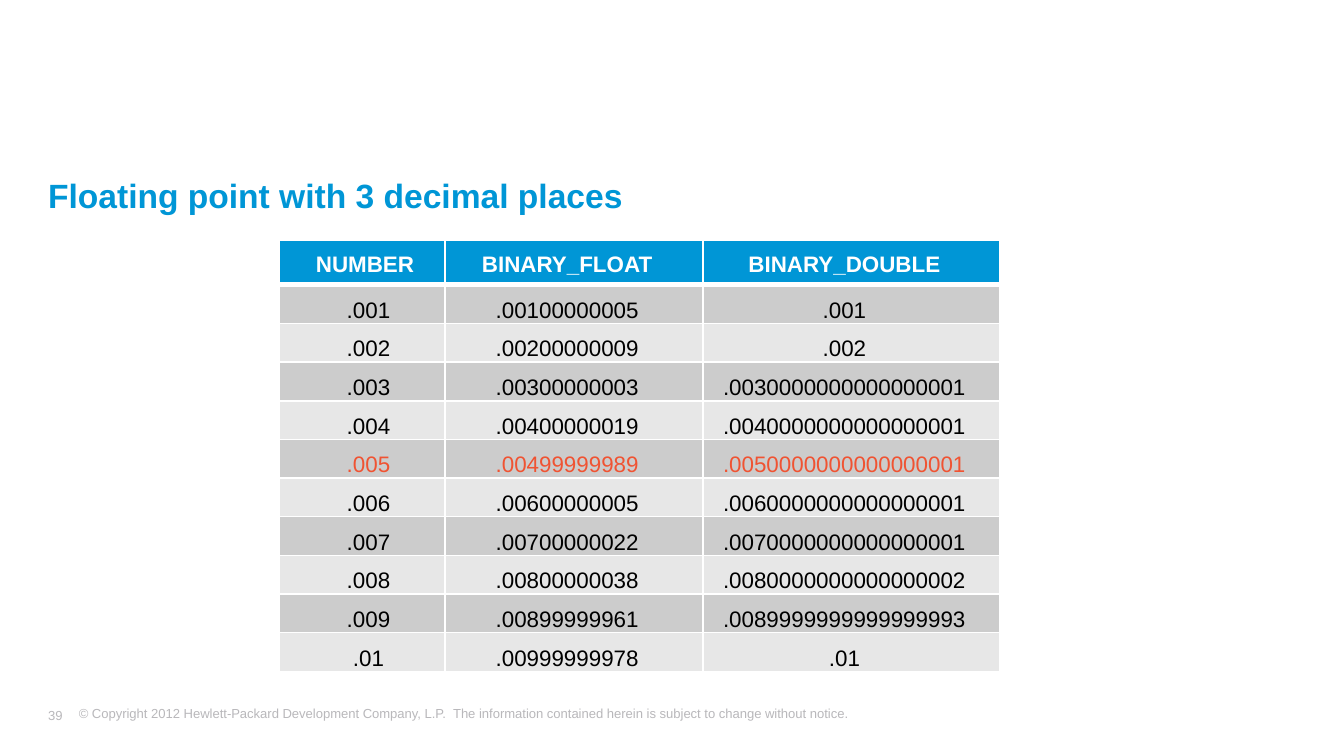
from lxml import etree
from pptx import Presentation
from pptx.dml.color import RGBColor
from pptx.enum import text
from pptx.oxml import ns
from pptx.util import Cm, Pt

COLORS = {
    "blue": "0096D6",
    "white": "FFFFFF",
    "black": "000000",
    "red": "F05332",
    "dark_band": "CCCCCC",
    "light_band": "E7E7E7",
    "footer": "B9B8BB",
}
ROWS = [
    (" NUMBER", "BINARY_FLOAT", "BINARY_DOUBLE"),
    (".001", ".00100000005", ".001"),
    (".002", ".00200000009", ".002"),
    (".003", ".00300000003", ".0030000000000000001"),
    (".004", ".00400000019", ".0040000000000000001"),
    (".005", ".00499999989", ".0050000000000000001"),
    (".006", ".00600000005", ".0060000000000000001"),
    (".007", ".00700000022", ".0070000000000000001"),
    (".008", ".00800000038", ".0080000000000000002"),
    (".009", ".00899999961", ".0089999999999999993"),
    (".01", ".00999999978", ".01"),
]
HIGHLIGHTED_NUMBER = ".005"
COLUMN_WIDTHS = [3.14, 4.88, 5.6]
HEADER_HEIGHT, ROW_HEIGHT = 0.85, 0.73


def style_font(paragraph, size, color, bold=False):
    for run in paragraph.runs:
        run.font.name = "Arial"
        run.font.size = Pt(size)
        run.font.bold = bold
        run.font.color.rgb = RGBColor.from_string(COLORS[color])


def add_borders(cell, top, bottom):
    """Draw white cell borders; top and bottom widths are in points."""
    properties = cell._tc.get_or_add_tcPr()
    widths = {"a:lnL": 1, "a:lnR": 1, "a:lnT": top, "a:lnB": bottom}
    for position, (tag, width) in enumerate(widths.items()):
        line = etree.Element(ns.qn(tag), w=str(Pt(width)))
        fill = etree.SubElement(line, ns.qn("a:solidFill"))
        etree.SubElement(fill, ns.qn("a:srgbClr"), val=COLORS["white"])
        properties.insert(position, line)


prs = Presentation()
prs.slide_width, prs.slide_height = Cm(25.4), Cm(14.28)
slide = prs.slides.add_slide(prs.slide_layouts[5])

# Heading
heading = slide.shapes.title
heading.left, heading.top = Cm(0.91), Cm(3.3)
heading.width, heading.height = Cm(22.56), Cm(1)
frame = heading.text_frame
frame.text = "Floating point with 3 decimal places"
frame.margin_left = frame.margin_top = frame.margin_right = frame.margin_bottom = 0
frame.vertical_anchor = text.MSO_ANCHOR.TOP
frame.paragraphs[0].alignment = text.PP_ALIGN.LEFT
style_font(frame.paragraphs[0], 18, "blue", bold=True)

# Comparison of number types
table_height = HEADER_HEIGHT + ROW_HEIGHT * (len(ROWS) - 1)
comparison = slide.shapes.add_table(
    len(ROWS), len(COLUMN_WIDTHS),
    Cm(5.27), Cm(4.53), Cm(sum(COLUMN_WIDTHS)), Cm(table_height),
).table
for column, width in zip(comparison.columns, COLUMN_WIDTHS):
    column.width = Cm(width)

for r, values in enumerate(ROWS):
    is_header = r == 0
    comparison.rows[r].height = Cm(HEADER_HEIGHT if is_header else ROW_HEIGHT)
    if is_header:
        band, color = "blue", "white"
    else:
        band = "dark_band" if r % 2 else "light_band"
        color = "red" if values[0] == HIGHLIGHTED_NUMBER else "black"
    for c, value in enumerate(values):
        cell = comparison.cell(r, c)
        cell.text = value
        cell.margin_left, cell.margin_top = Cm(0.25), Cm(0.24)
        cell.margin_bottom = Cm(0.13 if is_header else 0)
        if c:
            cell.margin_right = Cm(0.51)
        else:
            cell.margin_right = Cm(0.25 if is_header else 0)
        cell.vertical_anchor = text.MSO_ANCHOR.TOP if is_header else text.MSO_ANCHOR.MIDDLE
        cell.fill.solid()
        cell.fill.fore_color.rgb = RGBColor.from_string(COLORS[band])
        add_borders(cell, top=3 if r == 1 else 1, bottom=3 if is_header else 1)
        paragraph = cell.text_frame.paragraphs[0]
        paragraph.alignment = text.PP_ALIGN.CENTER
        style_font(paragraph, 12, color, bold=is_header)

# Footer: copyright line and page number
copyright_line = (
    "© Copyright 2012 Hewlett-Packard Development Company, L.P.  "
    "The information contained herein is subject to change without notice."
)
footer_parts = [
    (copyright_line, 1.24, 13.21, 22.25, 0.64, 0.25, True, text.MSO_ANCHOR.TOP),
    ("39", 0.91, 13.31, 0.89, 0.41, 0, False, text.MSO_ANCHOR.MIDDLE),
]
for words, left, top, width, height, inset, wrap, anchor in footer_parts:
    footer = slide.shapes.add_textbox(Cm(left), Cm(top), Cm(width), Cm(height)).text_frame
    footer.text = words
    footer.word_wrap = wrap
    footer.margin_left = Cm(inset)
    footer.vertical_anchor = anchor
    style_font(footer.paragraphs[0], 7, "footer")

prs.save("out.pptx")
